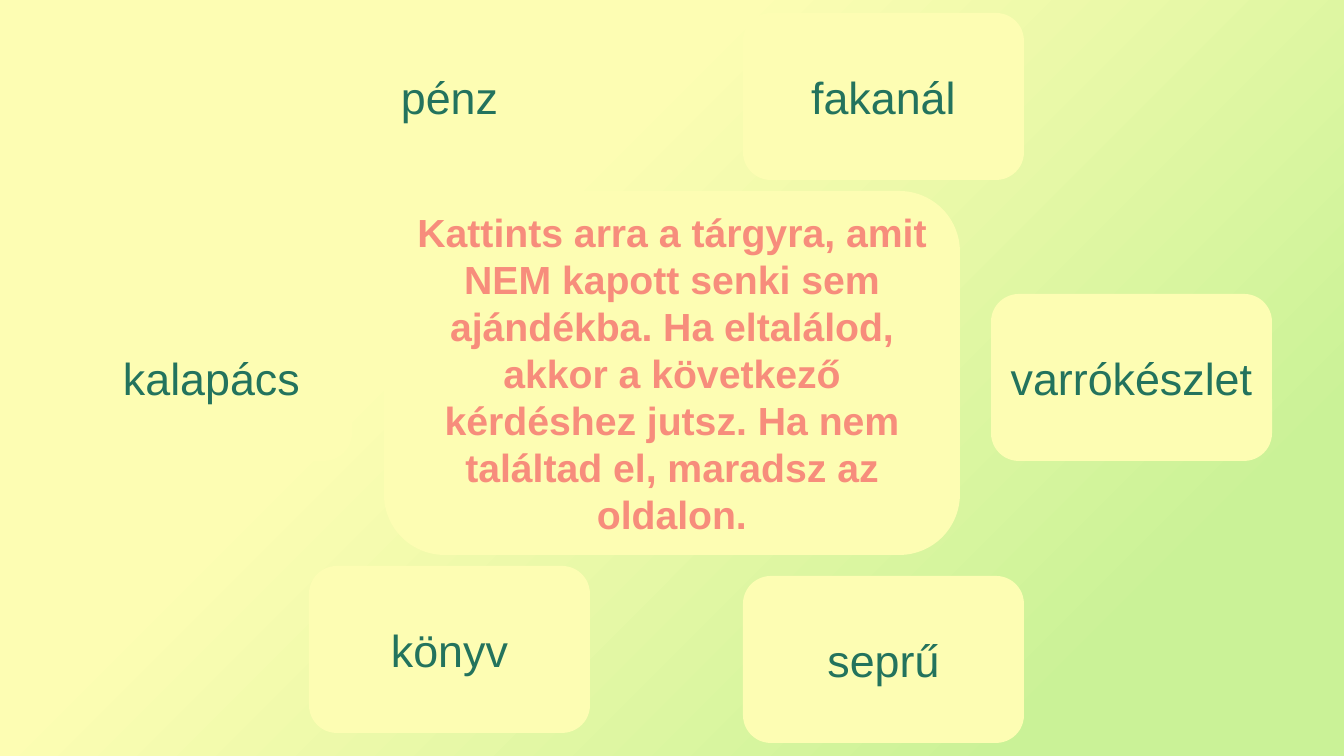
import pptx
import pptx.dml.color
import pptx.enum.shapes
import pptx.enum.text
import pptx.oxml
import pptx.oxml.ns
import pptx.util
from dataclasses import dataclass

PX = 914400 / 100.8


@dataclass(frozen=True)
class Theme:
    font: str = "Arial"
    cream: str = "FDFDB3"
    green: str = "CAF297"
    coral: str = "F78D7C"
    teal: str = "23735D"
    prompt_size: int = 28
    answer_size: int = 32


theme = Theme()


def px(length):
    return pptx.util.Emu(round(length * PX))


def add_card(page, left, top, width, height, text, size, colour, bold):
    box = page.shapes.add_shape(
        pptx.enum.shapes.MSO_SHAPE.ROUNDED_RECTANGLE,
        px(left), px(top), px(width), px(height))
    box.shadow.inherit = False
    box.fill.solid()
    box.fill.fore_color.rgb = pptx.dml.color.RGBColor.from_string(theme.cream)
    box.line.fill.background()
    frame = box.text_frame
    frame.word_wrap = True
    frame.vertical_anchor = pptx.enum.text.MSO_ANCHOR.MIDDLE
    frame.text = text
    para = frame.paragraphs[0]
    para.alignment = pptx.enum.text.PP_ALIGN.CENTER
    font = para.runs[0].font
    font.name = theme.font
    font.size = pptx.util.Pt(size)
    font.bold = bold
    font.color.rgb = pptx.dml.color.RGBColor.from_string(colour)


deck = pptx.Presentation()
deck.slide_width = px(1344)
deck.slide_height = px(756)
page = deck.slides.add_slide(deck.slide_layouts[6])

backdrop = page.background.fill
backdrop.gradient()
stops = [(0.35, theme.cream), (0.84, theme.green)]
for stop, (position, colour) in zip(backdrop.gradient_stops, stops):
    stop.position = position
    stop.color.rgb = pptx.dml.color.RGBColor.from_string(colour)
linear = page.element.find(".//" + pptx.oxml.ns.qn("a:lin"))
radial = pptx.oxml.parse_xml(
    f'<a:path {pptx.oxml.ns.nsdecls("a")} path="circle">'
    '<a:fillToRect r="100000" b="100000"/></a:path>')
linear.getparent().replace(linear, radial)

prompt = (
    "Kattints arra a tárgyra, amit NEM kapott senki sem ajándékba. "
    "Ha eltalálod, akkor a következő kérdéshez jutsz. "
    "Ha nem találtad el, maradsz az oldalon.")
add_card(page, 384, 191, 576, 364, prompt, theme.prompt_size, theme.coral, True)

answers = [
    ("pénz", 309, 13),
    ("kalapács", 71, 294),
    ("fakanál", 743, 13),
    ("varrókészlet", 991, 294),
    ("könyv", 309, 566),
    ("seprű", 743, 576),
]
for word, left, top in answers:
    add_card(page, left, top, 281, 167, word, theme.answer_size, theme.teal, False)

deck.save("out.pptx")
